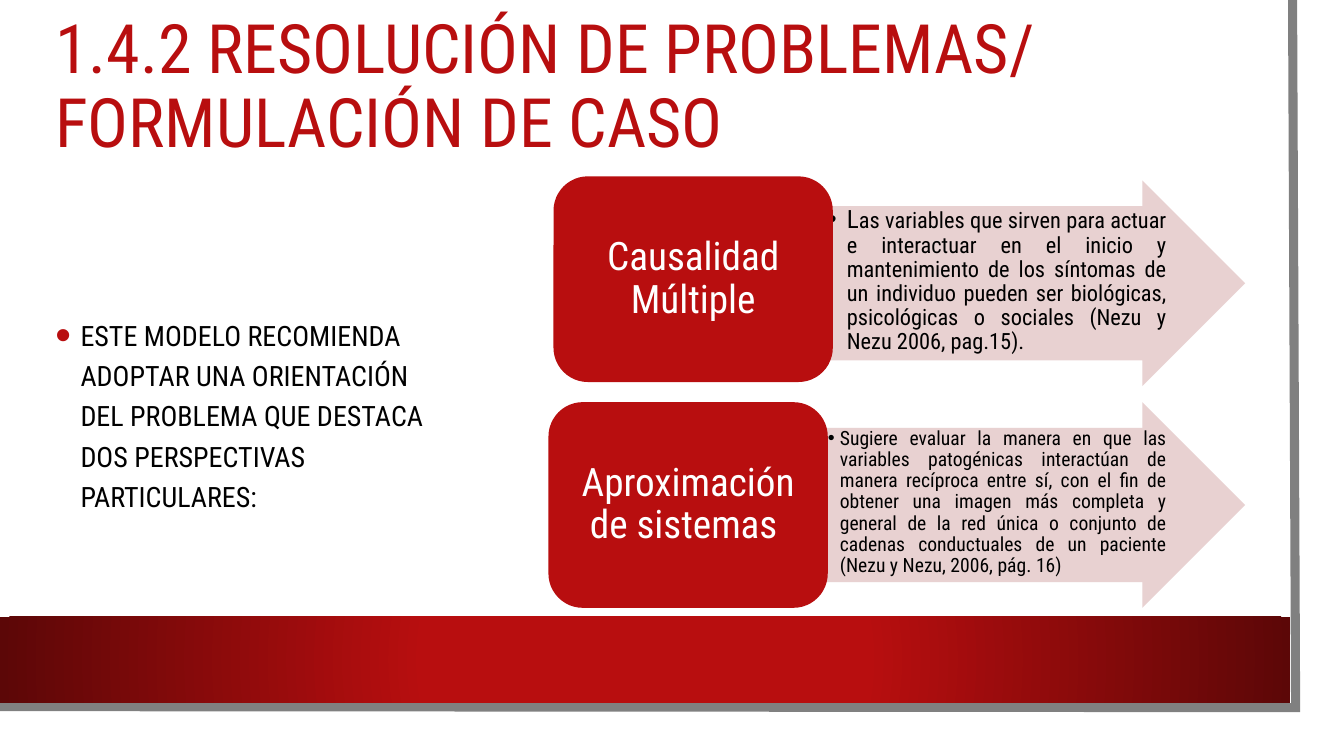
from dataclasses import dataclass
from typing import NamedTuple

from lxml import etree
from pptx import Presentation, util as u
from pptx.dml.color import RGBColor
from pptx.enum import shapes, text
from pptx.oxml import parse_xml
from pptx.oxml.ns import nsdecls, qn

PX = 9144  # 100 px to the inch


@dataclass(frozen=True)
class Theme:
    font: str = "Roboto Condensed"
    red: str = "B80E0F"
    dark: str = "5C0707"
    pink: str = "E6CCCC"
    gray: str = "808080"
    white: str = "FFFFFF"
    black: str = "000000"
    title: float = 48.6
    label: float = 28
    body: float = 20
    edge: float = 6.5


class Box(NamedTuple):
    x: int
    y: int
    w: int
    h: int


class Run(NamedTuple):
    words: str
    size: float


class Row(NamedTuple):
    label: str
    card: Box
    top: int
    indent: int
    runs: list[Run]


T = Theme()
KIND = shapes.MSO_SHAPE
ALIGN = text.PP_ALIGN
ANCHOR = text.MSO_ANCHOR

ROWS = [
    Row("Causalidad Múltiple", Box(549, 175, 277, 204), 179, 19, [
        Run("L", 18),
        Run("as variables que sirven para actuar e interactuar en el inicio y "
            "mantenimiento de los síntomas de un individuo pueden ser "
            "biológicas, psicológicas o sociales (Nezu y Nezu 2006, pag.15).",
            16)]),
    Row("Aproximación de sistemas ", Box(544, 399, 277, 204), 399, 12, [
        Run("Sugiere evaluar la manera en que las variables patogénicas "
            "interactúan de manera recíproca entre sí, con el fin de obtener "
            "una imagen más completa y general de la red única o conjunto de "
            "cadenas conductuales de un paciente (Nezu y Nezu, 2006, pág. 16)",
            14)]),
]


def emu(box: Box) -> list[int]:
    return [n * PX for n in box]


def shape(slide, kind, box: Box, fill: str):
    item = slide.shapes.add_shape(kind, *emu(box))
    item.shadow.inherit = False
    item.fill.solid()
    item.fill.fore_color.rgb = RGBColor.from_string(fill)
    item.line.fill.background()
    return item


def bullet(para, indent: int, color: str, scale: int) -> None:
    props = para._p.get_or_add_pPr()
    props.set("marL", str(indent * PX))
    props.set("indent", str(-indent * PX))
    tint = etree.SubElement(props, qn("a:buClr"))
    etree.SubElement(tint, qn("a:srgbClr"), val=color)
    etree.SubElement(props, qn("a:buSzPct"), val=str(scale * 1000))
    etree.SubElement(props, qn("a:buFont"), typeface="Arial")
    etree.SubElement(props, qn("a:buChar"), char="•")


def write(item, runs: list[Run], *, color: str = T.black, align=ALIGN.LEFT,
          anchor=ANCHOR.MIDDLE, space: float = 0.9, pad=(10, 5, 10, 5),
          indent: int = 0, dot: str = T.black, scale: int = 100) -> None:
    """Fill a shape with one paragraph; pad is left, top, right, bottom."""
    frame = item.text_frame
    frame.word_wrap = True
    frame.auto_size = text.MSO_AUTO_SIZE.NONE
    frame.vertical_anchor = anchor
    (frame.margin_left, frame.margin_top,
     frame.margin_right, frame.margin_bottom) = [n * PX for n in pad]
    para = frame.paragraphs[0]
    if indent:
        bullet(para, indent, dot, scale)
    para.alignment = align
    para.line_spacing = space
    for part in runs:
        run = para.add_run()
        run.text = part.words
        run.font.name = T.font
        run.font.size = u.Pt(part.size)
        run.font.color.rgb = RGBColor.from_string(color)


def field(slide, box: Box):
    return slide.shapes.add_textbox(*emu(box))


def frame(slide) -> None:
    """Draw the sheet, its gray edge and the red band."""
    shape(slide, KIND.RECTANGLE, Box(0, 0, 1310, 727), T.white)

    pen = slide.shapes.build_freeform(1282, 0, scale=PX)
    pen.add_line_segments([(1285, 702), (-3, 701)], close=False)
    edge = pen.convert_to_shape()
    edge.shadow.inherit = False
    edge.fill.background()
    edge.line.color.rgb = RGBColor.from_string(T.gray)
    edge.line.width = u.Pt(T.edge)
    etree.SubElement(edge.line._get_or_add_ln(), qn("a:miter"), lim="800000")

    band = shape(slide, KIND.RECTANGLE, Box(0, 612, 1280, 85), T.red)
    solid = band._element.spPr.find(qn("a:solidFill"))
    solid.getparent().replace(solid, parse_xml(
        f'<a:gradFill {nsdecls("a")} rotWithShape="1"><a:gsLst>'
        f'<a:gs pos="34000"><a:srgbClr val="{T.red}"/></a:gs>'
        f'<a:gs pos="100000"><a:srgbClr val="{T.dark}"/></a:gs></a:gsLst>'
        '<a:path path="circle"><a:fillToRect l="50000" t="50000" '
        'r="50000" b="50000"/></a:path></a:gradFill>'))


def draw(slide, row: Row) -> None:
    arrow = shape(slide, KIND.RIGHT_ARROW, Box(820, row.top, 415, 204), T.pink)
    arrow.adjustments[0] = 0.75
    arrow.adjustments[1] = 0.5
    tint = arrow._element.spPr.find(qn("a:solidFill"))[0]
    etree.SubElement(tint, qn("a:alpha"), val="90000")

    note = field(slide, Box(820, row.top + 25, 338, 153))
    write(note, row.runs, align=ALIGN.JUSTIFY, anchor=ANCHOR.TOP,
          pad=(1, 1, 1, 1), indent=row.indent)

    card = shape(slide, KIND.ROUNDED_RECTANGLE, row.card, T.red)
    write(card, [Run(row.label, T.label)], color=T.white, align=ALIGN.CENTER,
          pad=(12, 6, 12, 6))


def main() -> None:
    deck = Presentation()
    deck.slide_width, deck.slide_height = 1333 * PX, 750 * PX
    slide = deck.slides.add_slide(deck.slide_layouts[6])
    frame(slide)
    write(field(slide, Box(45, 283, 388, 289)),
          [Run("ESTE MODELO RECOMIENDA ADOPTAR UNA ORIENTACIÓN DEL PROBLEMA "
               "QUE DESTACA DOS PERSPECTIVAS PARTICULARES:", T.body)],
          space=1.2, pad=(10, 5, 10, 42), indent=25, dot=T.red, scale=160)
    for row in ROWS:
        draw(slide, row)
    write(field(slide, Box(45, 25, 1199, 126)),
          [Run("1.4.2 RESOLUCIÓN DE PROBLEMAS/ FORMULACIÓN DE CASO", T.title)],
          color=T.red)
    deck.save("out.pptx")


if __name__ == "__main__":
    main()
